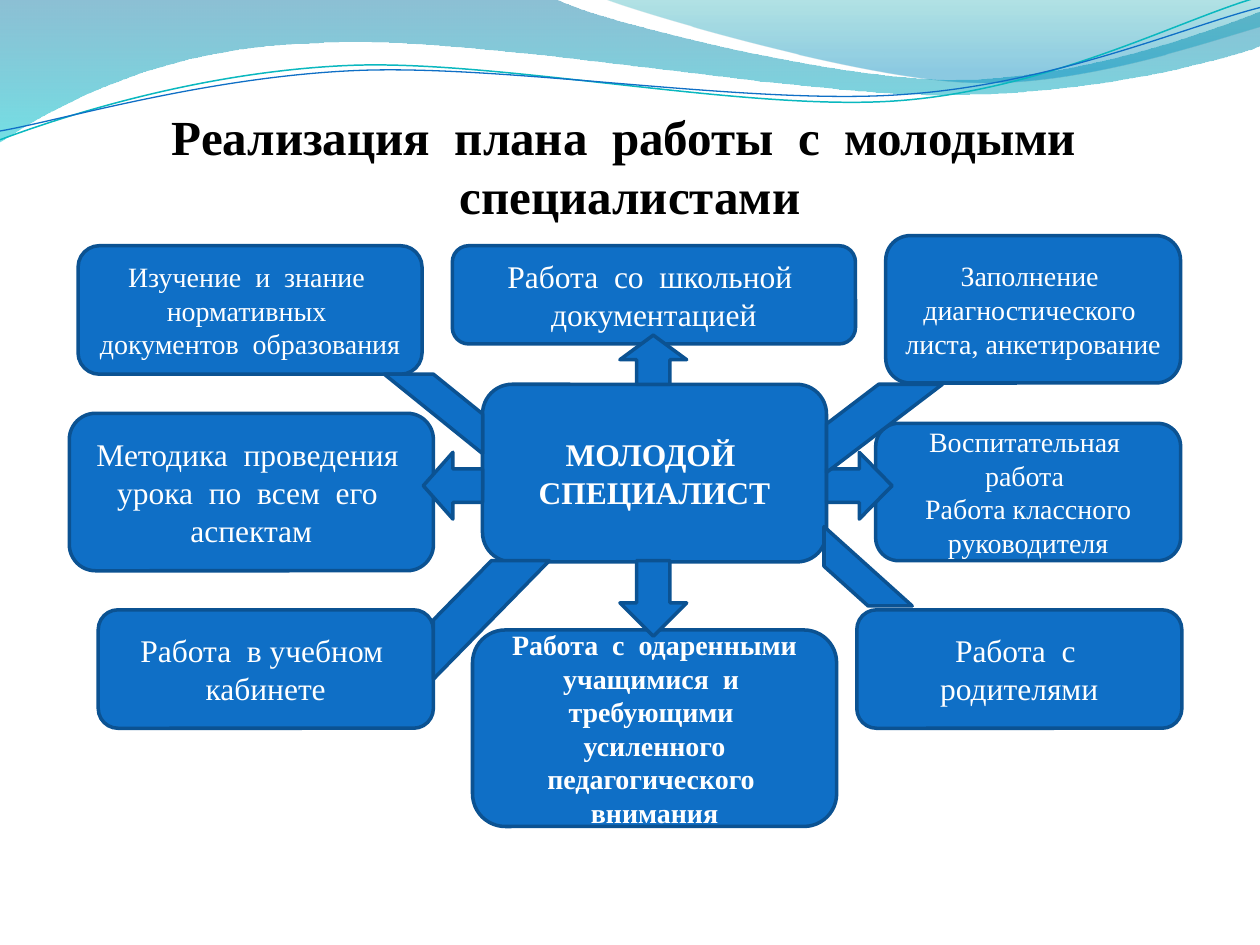
from lxml import etree
from pptx import Presentation
from pptx.dml.color import RGBColor
from pptx.enum import shapes, text
from pptx.oxml.ns import qn
from pptx.util import Inches, Pt

THEME = {
    "font": "Times New Roman",
    "box": "0F6FC6", "edge": "0B5292", "edge_width": 2,
    "on_box": "FFFFFF", "heading": "000000",
    "title": 28, "large": 18, "small": 16,
}

TITLE = "Реализация  плана  работы  с  молодыми  специалистами"

# paragraphs, size, bold, (left, top, width, height)
TOPICS = [
    (["МОЛОДОЙ  СПЕЦИАЛИСТ"], "large", True, (3.83, 3.05, 2.73, 1.41)),
    (["Изучение  и  знание  нормативных  документов  образования"],
     "small", False, (0.62, 1.95, 2.73, 1.02)),
    (["Заполнение  диагностического  листа, анкетирование"],
     "small", False, (7.03, 1.87, 2.34, 1.17)),
    (["Работа  с  родителями"], "large", False, (6.8, 4.84, 2.58, 0.94)),
    (["Воспитательная  работа ", "Работа классного руководителя"],
     "small", False, (6.95, 3.36, 2.42, 1.09)),
    (["Методика  проведения  урока  по  всем  его  аспектам"],
     "large", False, (0.55, 3.28, 2.89, 1.25)),
    (["Работа  со  школьной  документацией"], "large", False, (3.59, 1.95, 3.2, 0.78)),
    (["Работа  в учебном  кабинете"], "large", False, (0.78, 4.84, 2.66, 0.94)),
    (["Работа  с  одаренными учащимися  и  требующими  усиленного "
      "педагогического  внимания"], "small", True, (3.75, 5, 2.89, 1.56)),
]

ARROWS = [
    (shapes.MSO_SHAPE.UP_ARROW, (4.92, 2.66, 0.53, 0.39)),
    (shapes.MSO_SHAPE.LEFT_ARROW, (3.36, 3.59, 0.47, 0.53)),
    (shapes.MSO_SHAPE.RIGHT_ARROW, (6.56, 3.59, 0.52, 0.53)),
    (shapes.MSO_SHAPE.DOWN_ARROW, (4.92, 4.45, 0.53, 0.6)),
]

# place, flip attribute, stripe adjustment
STRIPES = [
    ((6.56, 3.05, 0.92, 0.7), None, 0.45),
    ((3.44, 4.45, 0.92, 0.94), None, 0.5),
    ((6.54, 4.18, 0.7, 0.63), "flipV", 0.5),
    ((3.05, 2.97, 0.78, 0.63), "flipH", 0.5),
]

# Outlines: a start point, then straight (2 numbers) or cubic (6 numbers) steps.
# Gradient stops run from top to bottom: position, colour, opacity in percent.
WAVES = [
    ([(0, 0), (4.4, -0.01), (4.76, 0.17, 6.64, 0.63, 7.58, 0.63),
      (8.53, 0.63, 9.58, 0.26, 10, 0.09), (10.01, 0.36),
      (9.83, 0.44, 8.7, 0.76, 7.46, 0.75), (6.22, 0.75, 3.82, 0.28, 2.57, 0.34),
      (1.29, 0.36, 0.46, 0.83, -0.01, 1.13)],
     [(0, "0074A1", 45), (1, "00C6CF", 55)]),
    ([(4.79, -0.01), (5.09, 0.11, 6.82, 0.62, 7.69, 0.65),
      (8.56, 0.69, 9.61, 0.32, 10, 0.21), (10, 0)],
     [(0, "00A1A9", 30), (0.8, "008BBF", 45)]),
]
WAVE_LINES = [
    ([(0, 1.11), (0.48, 0.93, 1.58, 0.57, 2.77, 0.52),
      (3.95, 0.47, 5.93, 0.89, 7.13, 0.8), (8.33, 0.71, 9.38, 0.15, 9.98, -0.02)],
     "0AB8BF", 0.85),
    ([(0, 1.04), (0.47, 0.96, 1.64, 0.61, 2.83, 0.56),
      (4.03, 0.51, 5.97, 0.84, 7.17, 0.75), (8.36, 0.67, 9.41, 0.21, 10, 0.06)],
     "0F6FC6", 0.75),
]


def rgb(value):
    return RGBColor.from_string(value)


def inches(values):
    return [Inches(value) for value in values]


def add_outline(slide, outline, close):
    """Draw all points as a polygon, then join each cubic step into one curve."""
    start, *steps = outline
    points = [inches(step[i:i + 2]) for step in steps for i in range(0, len(step), 2)]
    builder = slide.shapes.build_freeform(*inches(start))
    builder.add_line_segments(points, close=close)
    shape = builder.convert_to_shape()
    shape.shadow.inherit = False
    segments = iter(list(shape._element.iter(qn("a:lnTo"))))
    for step in steps:
        first, *others = [next(segments) for _ in range(len(step) // 2)]
        if others:
            first.addprevious(curve := etree.Element(qn("a:cubicBezTo")))
            for segment in (first, *others):
                curve.append(segment[0])
                segment.getparent().remove(segment)
    return shape


def add_wave(slide, outline, stops):
    wave = add_outline(slide, outline, True)
    wave.line.fill.background()
    wave.fill.gradient()
    wave.fill.gradient_angle = 270
    for stop, (position, colour, _) in zip(wave.fill.gradient_stops, stops):
        stop.position = position
        stop.color.rgb = rgb(colour)
    colours = wave._element.spPr.iter(qn("a:srgbClr"))
    for element, (_, _, opacity) in zip(list(colours), stops):
        etree.SubElement(element, qn("a:alpha")).set("val", str(opacity * 1000))


def add_wave_line(slide, outline, colour, width):
    curve = add_outline(slide, outline, False)
    curve.fill.background()
    curve.line.color.rgb = rgb(colour)
    curve.line.width = Pt(width)


def add_block(slide, kind, place):
    block = slide.shapes.add_shape(kind, *inches(place))
    block.shadow.inherit = False
    block.fill.solid()
    block.fill.fore_color.rgb = rgb(THEME["box"])
    block.line.color.rgb = rgb(THEME["edge"])
    block.line.width = Pt(THEME["edge_width"])
    return block


def write(frame, paragraphs, size, colour, bold, anchor):
    frame.text = "\n".join(paragraphs)
    frame.word_wrap = True
    frame.auto_size = text.MSO_AUTO_SIZE.NONE
    frame.vertical_anchor = anchor
    for paragraph in frame.paragraphs:
        paragraph.alignment = text.PP_ALIGN.CENTER
        paragraph.font.name = THEME["font"]
        paragraph.font.size = Pt(THEME[size])
        paragraph.font.bold = bold
        paragraph.font.color.rgb = rgb(THEME[colour])


def add_title(slide):
    title = slide.shapes.title
    title.left, title.top, title.width, title.height = inches((0.5, 0.77, 9, 1.01))
    frame = title.text_frame
    frame.margin_left = frame.margin_right = frame.margin_bottom = 0
    frame.margin_top = Inches(0.05)
    write(frame, [TITLE], "title", "heading", True, text.MSO_ANCHOR.BOTTOM)
    slide.shapes._spTree.append(title._element)  # in front of the waves


def main():
    deck = Presentation()
    deck.slide_width, deck.slide_height = inches((10, 7.5))
    slide = deck.slides.add_slide(deck.slide_layouts[5])
    for wave in WAVES:
        add_wave(slide, *wave)
    for wave_line in WAVE_LINES:
        add_wave_line(slide, *wave_line)
    add_title(slide)
    for paragraphs, size, bold, place in TOPICS:
        topic = add_block(slide, shapes.MSO_SHAPE.ROUNDED_RECTANGLE, place)
        write(topic.text_frame, paragraphs, size, "on_box", bold, text.MSO_ANCHOR.MIDDLE)
    for kind, place in ARROWS:
        add_block(slide, kind, place)
    for place, flip, adjustment in STRIPES:
        stripe = add_block(slide, shapes.MSO_SHAPE.DIAGONAL_STRIPE, place)
        stripe.adjustments[0] = adjustment
        if flip:
            stripe._element.spPr.xfrm.set(flip, "1")
    deck.save("out.pptx")


if __name__ == "__main__":
    main()
